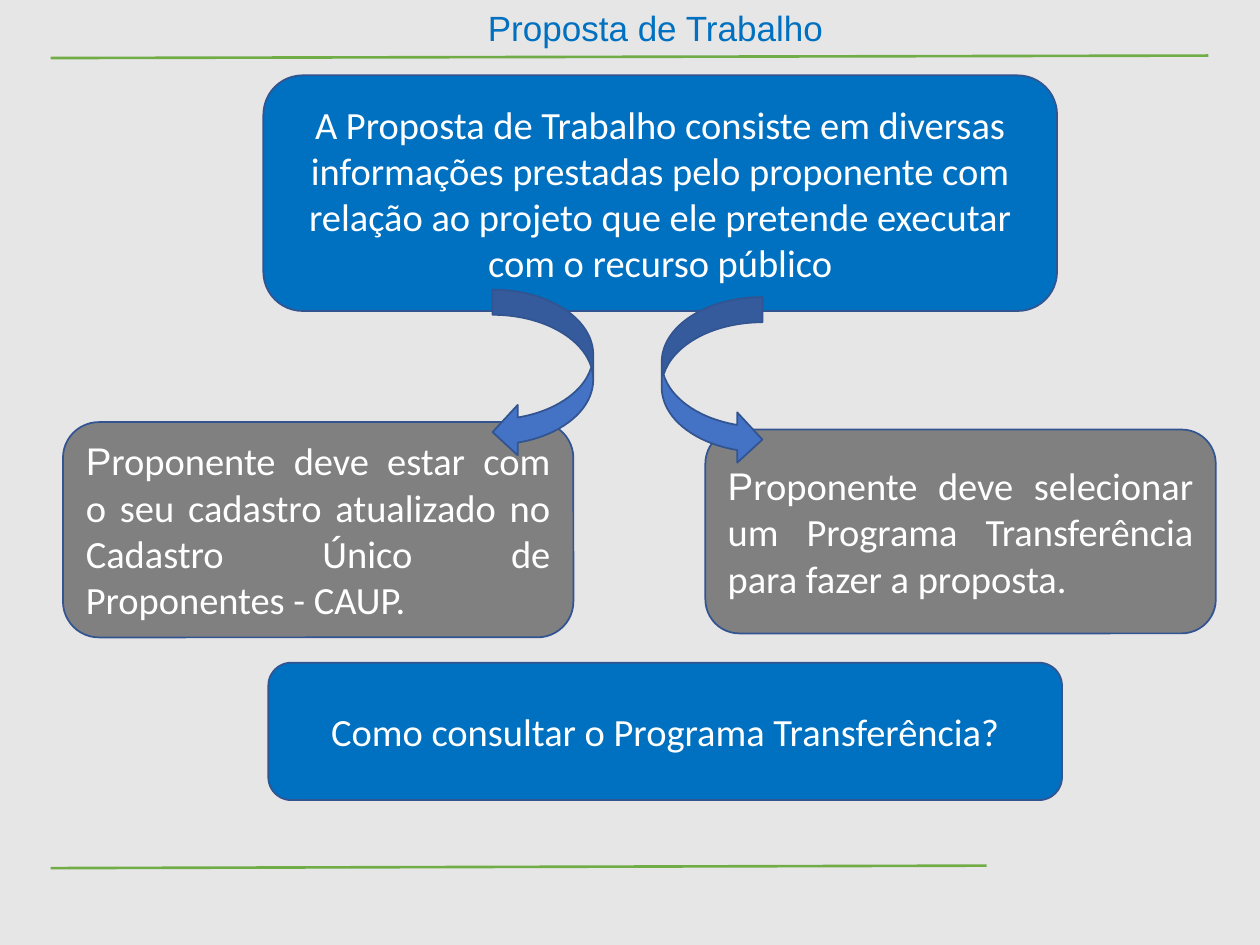
"""Build the "Proposta de Trabalho" slide."""
from lxml.etree import SubElement
from pptx import Presentation
from pptx.dml.color import RGBColor
from pptx.enum.shapes import MSO_CONNECTOR, MSO_SHAPE
from pptx.enum.text import MSO_ANCHOR, MSO_AUTO_SIZE, PP_ALIGN
from pptx.oxml.ns import qn
from pptx.util import Cm, Pt

BACKGROUND = RGBColor(0xE7, 0xE6, 0xE6)
GREEN = RGBColor(0x70, 0xAD, 0x47)
BLUE = RGBColor(0x00, 0x70, 0xC0)
GRAY = RGBColor(0x80, 0x80, 0x80)
ARROW = RGBColor(0x44, 0x72, 0xC4)
OUTLINE = RGBColor(0x32, 0x54, 0x91)
WHITE = RGBColor(0xFF, 0xFF, 0xFF)


def add_run(p, text, font, size, color):
    r = p.add_run()
    r.text = text
    r.font.name = font
    r.font.size = Pt(size)
    r.font.color.rgb = color


def add_outlined(s, kind, box, fill):
    sp = s.shapes.add_shape(kind, *[Cm(v) for v in box])
    sp.shadow.inherit = False
    sp.fill.solid()
    sp.fill.fore_color.rgb = fill
    sp.line.color.rgb = OUTLINE
    sp.line.width = Pt(1)
    return sp


prs = Presentation()
prs.slide_width = Cm(25.4)
prs.slide_height = Cm(19.05)
s = prs.slides.add_slide(prs.slide_layouts[5])
s.background.fill.solid()
s.background.fill.fore_color.rgb = BACKGROUND

title = s.shapes.title
title.left, title.top, title.width, title.height = Cm(9.58), Cm(0), Cm(7.32), Cm(1.11)
tf = title.text_frame
tf.word_wrap = False
tf.auto_size = MSO_AUTO_SIZE.NONE
tf.vertical_anchor = MSO_ANCHOR.TOP
p = tf.paragraphs[0]
p.alignment = PP_ALIGN.LEFT
add_run(p, "Proposta de Trabalho", "Arial", 20, BLUE)

for x2, y1, y2 in [(24.36, 1.17, 1.12), (19.89, 17.5, 17.45)]:
    rule = s.shapes.add_connector(MSO_CONNECTOR.STRAIGHT, Cm(1.02), Cm(y1), Cm(x2), Cm(y2))
    rule.line.color.rgb = GREEN
    rule.line.width = Pt(1.5)
    SubElement(rule._element.spPr, qn("a:effectLst"))

CENTER, JUSTIFY = PP_ALIGN.CENTER, PP_ALIGN.JUSTIFY
boxes = [
    ((5.31, 1.52, 16, 4.75), BLUE, CENTER, [
        ("A Proposta de Trabalho consiste em diversas informações prestadas pelo proponente "
         "com relação ao projeto que ele pretende executar com o recurso público", "Calibri")]),
    ((1.27, 8.51, 10.29, 4.34), GRAY, JUSTIFY, [
        ("P", "Arial"),
        ("roponente deve estar com o seu cadastro atualizado no Cadastro Único "
         "de Proponentes - CAUP.", "Calibri")]),
    ((14.22, 8.66, 10.29, 4.11), GRAY, JUSTIFY, [
        ("P", "Arial"),
        ("roponente deve selecionar um Programa Transferência para fazer a proposta.", "Calibri")]),
    ((5.41, 13.36, 16, 2.77), BLUE, CENTER, [
        ("Como consultar o Programa Transferência?", "Calibri")]),
]
for box, fill, align, runs in boxes:
    sp = add_outlined(s, MSO_SHAPE.ROUNDED_RECTANGLE, box, fill)
    tf = sp.text_frame
    tf.word_wrap = True
    tf.vertical_anchor = MSO_ANCHOR.MIDDLE
    p = tf.paragraphs[0]
    p.alignment = align
    for text, font in runs:
        add_run(p, text, font, 22, WHITE)

for kind, x, y in [(MSO_SHAPE.CURVED_RIGHT_ARROW, 13.34, 5.99),
                   (MSO_SHAPE.CURVED_LEFT_ARROW, 9.93, 5.84)]:
    add_outlined(s, kind, (x, y, 2.03, 3.38), ARROW)

prs.save("out.pptx")
